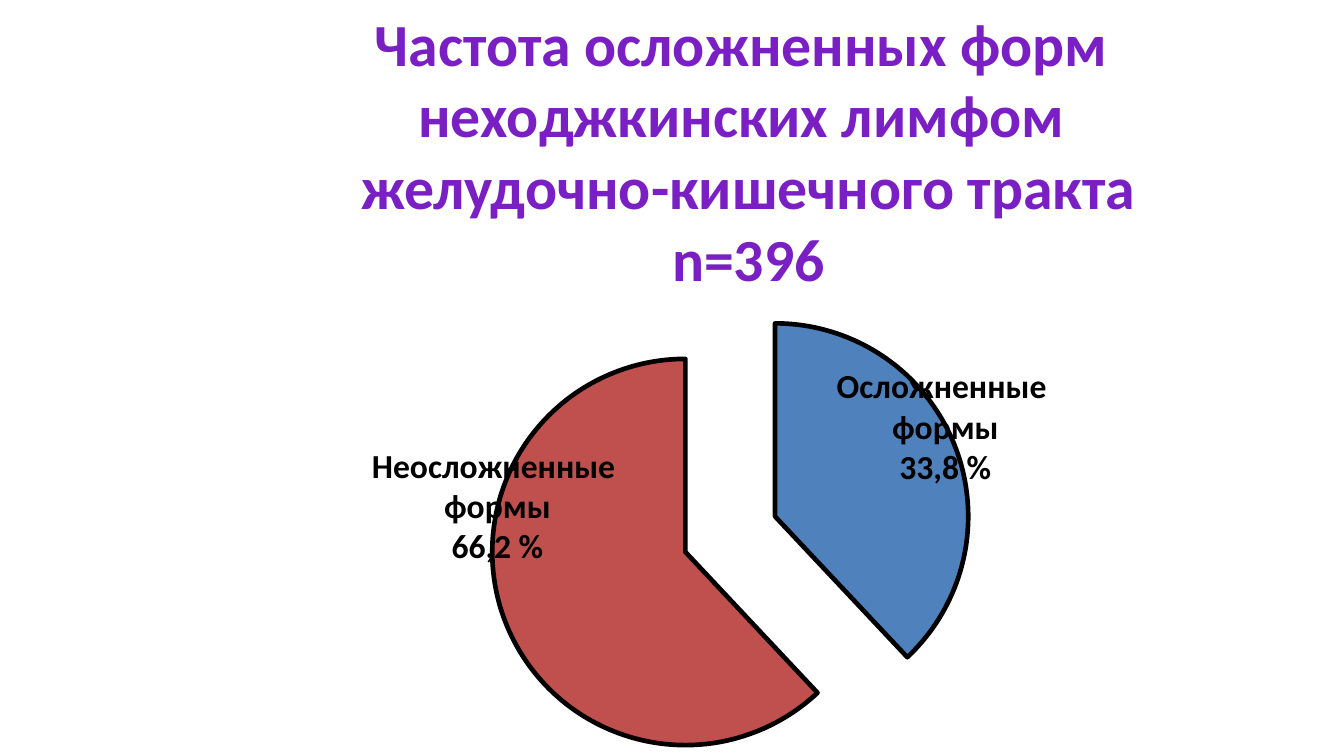
from lxml import etree
from pptx import Presentation
from pptx.chart import data as cd
from pptx.dml import color
from pptx.enum import chart as ce, text
from pptx.oxml import ns
from pptx.util import Pt

COLORS = {"title": "791FC3", "label": "000000", "line": "000000",
          "complicated": "4F81BD", "uncomplicated": "C0504D"}
FONT = "Calibri"


def rgb(name):
    return color.RGBColor.from_string(COLORS[name])


def add_lines(s, box, lines, size, name, wrap):
    sp = s.shapes.add_textbox(*map(Pt, box))
    tf = sp.text_frame
    tf.word_wrap = wrap
    tf.auto_size = text.MSO_AUTO_SIZE.SHAPE_TO_FIT_TEXT
    for i, line in enumerate(lines):
        p = tf.paragraphs[0] if i == 0 else tf.add_paragraph()
        p.alignment = text.PP_ALIGN.CENTER
        r = p.add_run()
        r.text = line
        r.font.name = FONT
        r.font.size = Pt(size)
        r.font.bold = True
        r.font.color.rgb = rgb(name)


def add_pie(s, box):
    data = cd.CategoryChartData()
    data.categories = ["1", "2"]
    data.add_series("Series 1", (38, 62))
    chart = s.shapes.add_chart(ce.XL_CHART_TYPE.PIE, *map(Pt, box), data).chart
    chart.has_title = False
    chart.has_legend = False
    chart.font.name = FONT
    chart.font.size = Pt(10)
    chart.font.color.rgb = rgb("label")
    plot = chart.plots[0]
    plot.vary_by_categories = True
    series = plot.series[0]
    series.format.line.width = Pt(2.5)
    explosion = etree.Element(ns.qn("c:explosion"), val="25")
    series._element.find(ns.qn("c:spPr")).addnext(explosion)
    for i, name in enumerate(("complicated", "uncomplicated")):
        fmt = series.points[i].format
        fmt.fill.solid()
        fmt.fill.fore_color.rgb = rgb(name)
        fmt.line.color.rgb = rgb("line")
        fmt.line.width = Pt(2.5)


def main():
    prs = Presentation()
    prs.slide_width, prs.slide_height = Pt(720), Pt(405)
    s = prs.slides.add_slide(prs.slide_layouts[6])
    add_pie(s, (114.5, 147, 553.5, 278.5))
    add_lines(s, (191.5, 234.7, 150, 72.7),
              ("Неосложненные ", "формы", "66,2 %"), 18, "label", False)
    add_lines(s, (440.6, 192.2, 131.8, 72.7),
              ("Осложненные ", "формы", "33,8 %"), 18, "label", False)
    add_lines(s, (41, 0, 720, 162.7),
              ("Частота осложненных форм ", "неходжкинских лимфом ",
               "желудочно-кишечного тракта", "n=396"), 32, "title", True)
    prs.save("out.pptx")


if __name__ == "__main__":
    main()
